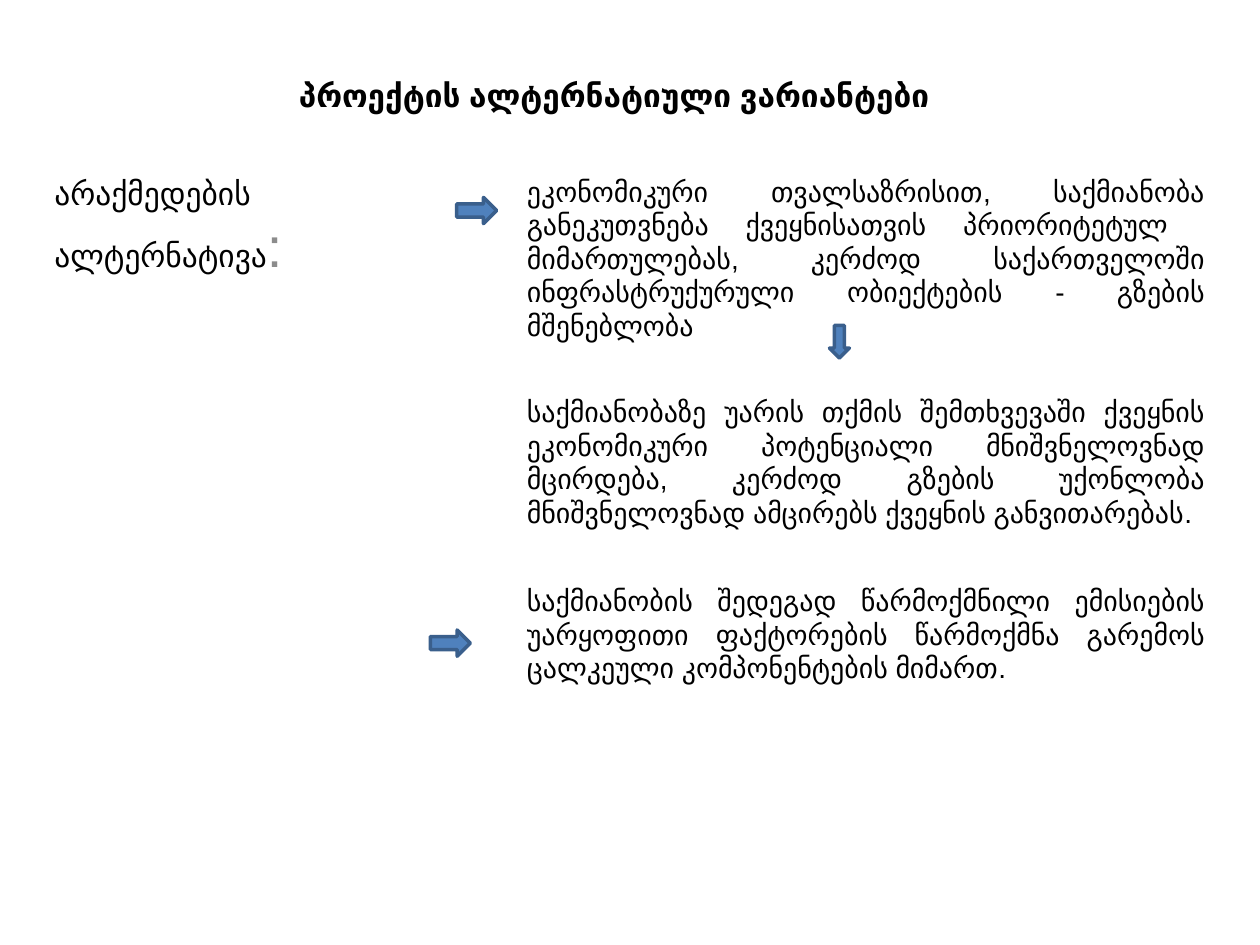
from pptx import Presentation
from pptx import util as u
from pptx.dml.color import RGBColor
from pptx.enum import shapes, text

COLORS = {"ink": "000000", "muted": "8C8C8C", "fill": "4F81BD", "line": "3A5F8C"}
FONT = "Arial"
COLS, ROWS = 120, 90
WIDTH, HEIGHT = u.Inches(10), u.Inches(7.5)
BODY_COL, BODY_COLS = 49, 67

STATEMENTS = [
    (16, 17.4, "ეკონომიკური თვალსაზრისით, საქმიანობა განეკუთვნება ქვეყნისათვის "
               "პრიორიტეტულ  მიმართულებას, კერძოდ საქართველოში "
               "ინფრასტრუქურული ობიექტების - გზების მშენებლობა"),
    (37, 14.2, "საქმიანობაზე უარის თქმის შემთხვევაში ქვეყნის ეკონომიკური "
               "პოტენციალი მნიშვნელოვნად მცირდება, კერძოდ გზების უქონლობა "
               "მნიშვნელოვნად ამცირებს ქვეყნის განვითარებას."),
    (55, 10.9, "საქმიანობის შედეგად წარმოქმნილი ემისიების უარყოფითი ფაქტორების "
               "წარმოქმნა გარემოს ცალკეული კომპონენტების მიმართ."),
]
ARROWS = [
    (shapes.MSO_SHAPE.RIGHT_ARROW, 43.5, 18.8, 3.8, 2.5),
    (shapes.MSO_SHAPE.DOWN_ARROW, 79, 31, 1.9, 3.1),
    (shapes.MSO_SHAPE.RIGHT_ARROW, 41, 60, 3.8, 2.5),
]


def rgb(name):
    """Return the named colour."""
    return RGBColor.from_string(COLORS[name])


def cells(col, row, cols, rows):
    """Turn grid columns and rows into slide lengths."""
    dx, dy = WIDTH / COLS, HEIGHT / ROWS
    return int(col * dx), int(row * dy), int(cols * dx), int(rows * dy)


def style(font, size, color="ink", bold=False):
    """Set the face, size, colour and weight of a font."""
    font.name, font.size, font.bold = FONT, u.Pt(size), bold
    font.color.rgb = rgb(color)


def add_text(slide, box, words, size, align=text.PP_ALIGN.JUSTIFY,
             anchor=text.MSO_ANCHOR.TOP, bold=False):
    """Add a wrapped one-paragraph text box and return its paragraph."""
    tf = slide.shapes.add_textbox(*cells(*box)).text_frame
    tf.word_wrap = True
    tf.vertical_anchor = anchor
    p = tf.paragraphs[0]
    p.alignment = align
    p.add_run().text = words
    style(p.font, size, bold=bold)
    return p


def add_arrow(slide, kind, *box):
    """Add an outlined block arrow."""
    sp = slide.shapes.add_shape(kind, *cells(*box))
    sp.shadow.inherit = False
    sp.fill.solid()
    sp.fill.fore_color.rgb = rgb("fill")
    sp.line.color.rgb = rgb("line")
    sp.line.width = u.Pt(2)


def main():
    """Build and save the slide."""
    prs = Presentation()
    prs.slide_width, prs.slide_height = WIDTH, HEIGHT
    slide = prs.slides.add_slide(prs.slide_layouts[6])
    add_text(slide, (7, 6, 103, 6), "პროექტის ალტერნატიული ვარიანტები", 18,
             text.PP_ALIGN.CENTER, text.MSO_ANCHOR.MIDDLE, bold=True)
    p = add_text(slide, (4, 16, 41.6, 7.7), "არაქმედების ალტერნატივა", 18)
    r = p.add_run()
    r.text = ":"
    style(r.font, 32, "muted")
    for row, rows, words in STATEMENTS:
        add_text(slide, (BODY_COL, row, BODY_COLS, rows), words, 16)
    for arrow in ARROWS:
        add_arrow(slide, *arrow)
    prs.save("out.pptx")


if __name__ == "__main__":
    main()
